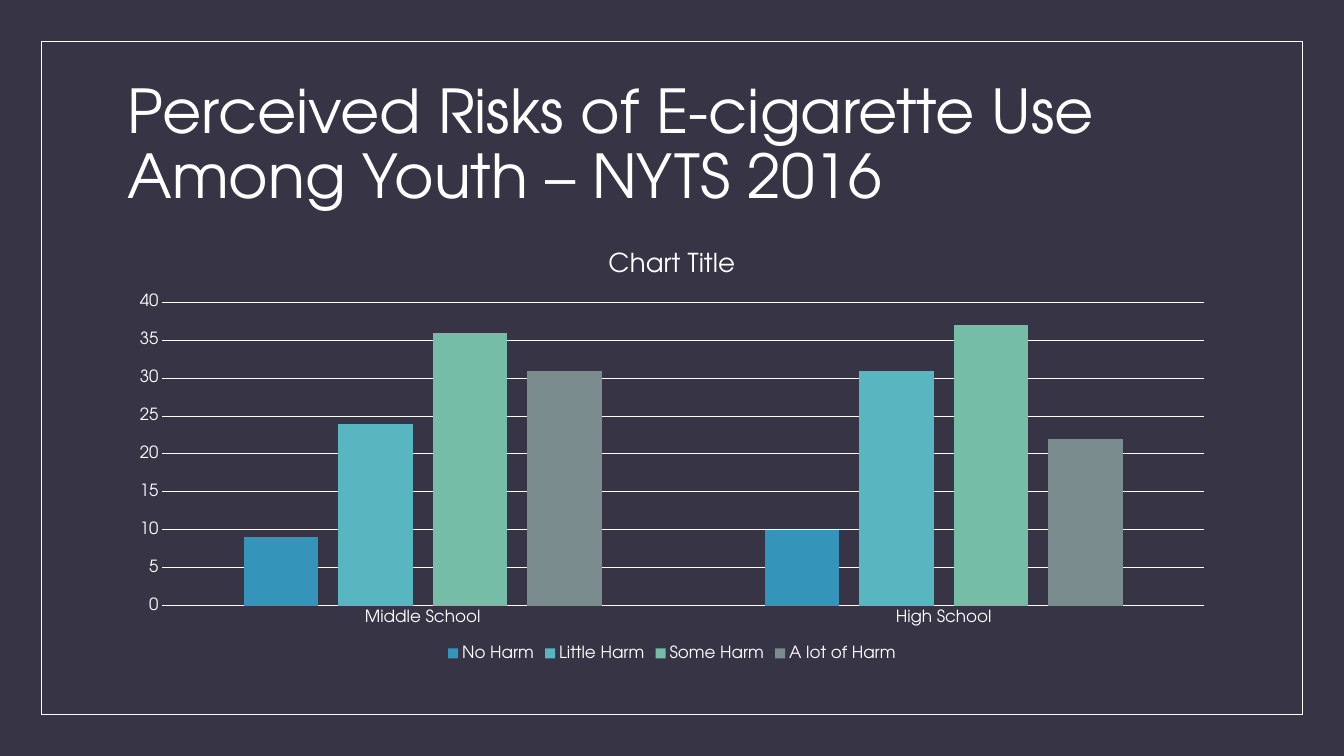
from pptx import Presentation
from pptx.chart import data as chart_data
from pptx.dml import color
from pptx.enum import chart as chart_enum, shapes, text
from pptx.util import Pt

FONT = "TeX Gyre Adventor"
WHITE = "FFFFFF"
BACKGROUND = "373545"
SCHOOLS = ["Middle School", "High School"]
HARM_LEVELS = [
    ("No Harm", (9, 10), "3494BA"),
    ("Little Harm", (24, 31), "58B6C0"),
    ("Some Harm", (36, 37), "75BDA7"),
    ("A lot of Harm", (31, 22), "7A8C8E"),
]


def paint(target, hex_color):
    target.solid()
    target.fore_color.rgb = color.RGBColor.from_string(hex_color)


def style_font(font, size):
    font.name = FONT
    font.size = Pt(size)
    font.bold = False
    paint(font.fill, WHITE)


def style_line(line, width):
    line.width = Pt(width)
    paint(line.fill, WHITE)


def add_frame(slide, left, top, width, height):
    frame = slide.shapes.add_shape(
        shapes.MSO_SHAPE.RECTANGLE, Pt(left), Pt(top), Pt(width), Pt(height))
    frame.shadow.inherit = False
    frame.fill.background()
    style_line(frame.line, 0.5)


def add_heading(slide, wording, left, top, width, height):
    heading = slide.shapes.add_textbox(Pt(left), Pt(top), Pt(width), Pt(height)).text_frame
    heading.word_wrap = True
    heading.vertical_anchor = text.MSO_ANCHOR.MIDDLE
    heading.text = wording
    paragraph = heading.paragraphs[0]
    paragraph.line_spacing = 0.9
    style_font(paragraph.runs[0].font, 43.2)


def style_axes(chart):
    for axis in (chart.category_axis, chart.value_axis):
        axis.major_tick_mark = chart_enum.XL_TICK_MARK.NONE
        axis.minor_tick_mark = chart_enum.XL_TICK_MARK.NONE
        style_font(axis.tick_labels.font, 12)
    style_line(chart.category_axis.format.line, 0.75)
    harm_scale = chart.value_axis
    harm_scale.minimum_scale = 0
    harm_scale.maximum_scale = 40
    harm_scale.major_unit = 5
    harm_scale.format.line.fill.background()
    style_line(harm_scale.major_gridlines.format.line, 0.75)


def add_risk_chart(slide, left, top, width, height):
    risks = chart_data.CategoryChartData(number_format="General")
    risks.categories = SCHOOLS
    for level, values, _ in HARM_LEVELS:
        risks.add_series(level, values)
    chart = slide.shapes.add_chart(
        chart_enum.XL_CHART_TYPE.COLUMN_CLUSTERED,
        Pt(left), Pt(top), Pt(width), Pt(height), risks).chart
    style_font(chart.font, 10)

    chart.has_title = True
    chart.chart_title.include_in_layout = False
    caption = chart.chart_title.text_frame
    caption.text = "Chart Title"
    style_font(caption.paragraphs[0].runs[0].font, 18.6)

    chart.has_legend = True
    chart.legend.position = chart_enum.XL_LEGEND_POSITION.BOTTOM
    chart.legend.include_in_layout = False
    style_font(chart.legend.font, 12)
    style_axes(chart)

    columns = chart.plots[0]
    columns.gap_width = 219
    columns.overlap = -27
    columns.vary_by_categories = False
    for series, (_, _, fill_color) in zip(columns.series, HARM_LEVELS):
        series.invert_if_negative = False
        paint(series.format.fill, fill_color)


def main():
    deck = Presentation()
    deck.slide_width = Pt(960)
    deck.slide_height = Pt(540)
    slide = deck.slides.add_slide(deck.slide_layouts[6])
    paint(slide.background.fill, BACKGROUND)
    add_frame(slide, 29.5, 29.5, 901, 481)
    add_heading(slide, "Perceived Risks of E-cigarette Use Among Youth – NYTS 2016",
                84, 50.4, 792, 108)
    add_risk_chart(slide, 84, 165.6, 792, 309.6)
    deck.save("out.pptx")


if __name__ == "__main__":
    main()
